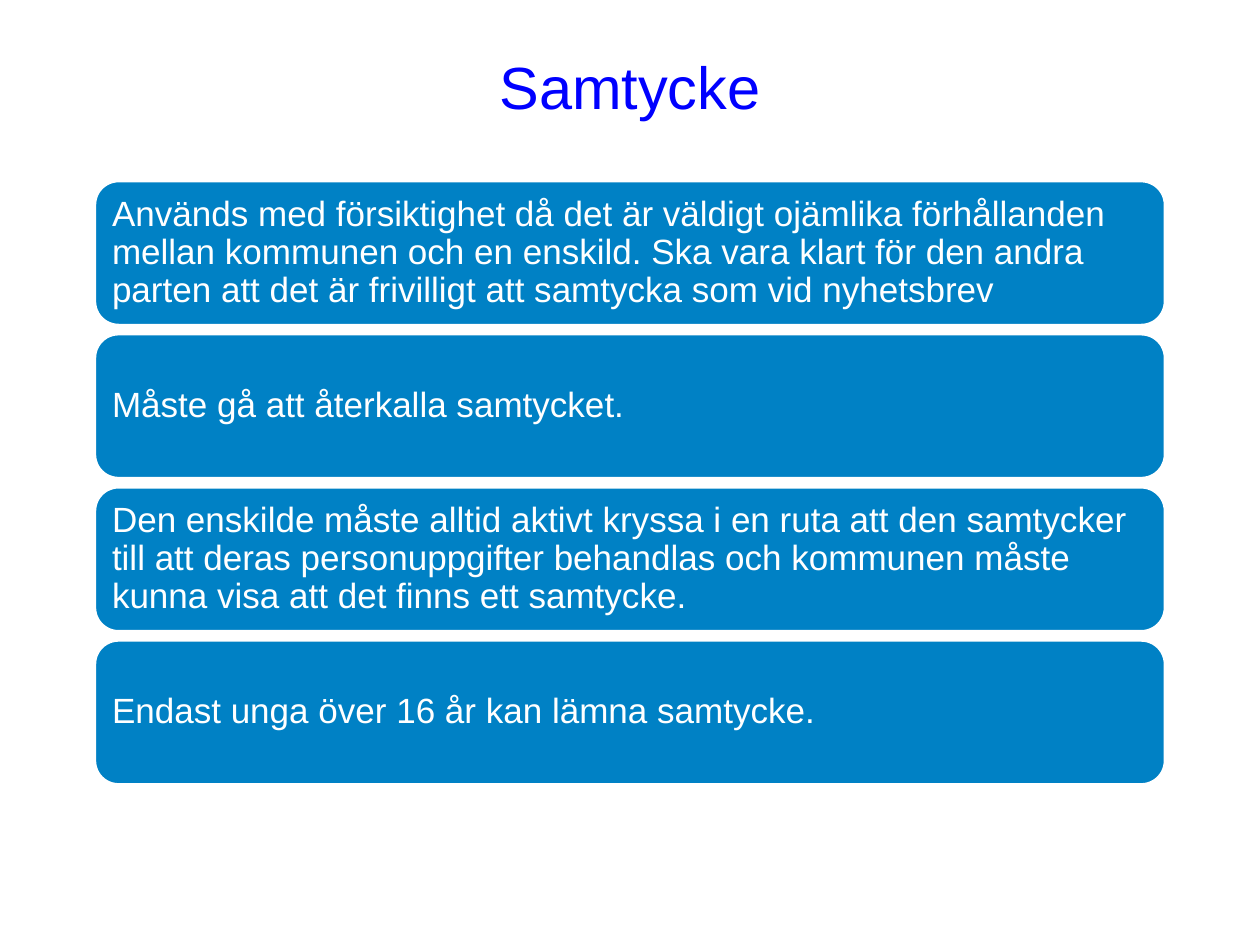
import pptx
import pptx.dml.color
import pptx.enum.shapes
import pptx.enum.text
import pptx.util

Pt = pptx.util.Pt
PP_ALIGN = pptx.enum.text.PP_ALIGN


def rgb(hex_colour):
    return pptx.dml.color.RGBColor.from_string(hex_colour)


def write(frame, text, size, colour, align, inset, line_spacing=1.0):
    """Fill a text frame with one formatted, vertically centred paragraph."""
    frame.word_wrap = True
    frame.auto_size = pptx.enum.text.MSO_AUTO_SIZE.NONE
    frame.vertical_anchor = pptx.enum.text.MSO_ANCHOR.MIDDLE
    frame.margin_left = frame.margin_right = Pt(inset)
    frame.margin_top = frame.margin_bottom = Pt(inset)
    paragraph = frame.paragraphs[0]
    paragraph.alignment = align
    paragraph.line_spacing = line_spacing
    paragraph.space_before = Pt(0)
    run = paragraph.add_run()
    run.text = text
    run.font.name = "Arial"
    run.font.size = Pt(size)
    run.font.color.rgb = rgb(colour)


presentation = pptx.Presentation()
presentation.slide_width = Pt(720)
presentation.slide_height = Pt(540)
slide = presentation.slides.add_slide(presentation.slide_layouts[5])

LEFT, WIDTH = 54, 612
heading = slide.shapes.title
heading.left, heading.top = Pt(LEFT), Pt(15)
heading.width, heading.height = Pt(WIDTH), Pt(68)
write(heading.text_frame, "Samtycke", size=34, colour="0000FF",
      align=PP_ALIGN.CENTER, inset=4)

consent_rules = [
    "Används med försiktighet då det är väldigt ojämlika förhållanden mellan "
    "kommunen och en enskild. Ska vara klart för den andra parten att det är "
    "frivilligt att samtycka som vid nyhetsbrev",
    "Måste gå att återkalla samtycket.",
    "Den enskilde måste alltid aktivt kryssa i en ruta att den samtycker till "
    "att deras personuppgifter behandlas och kommunen måste kunna visa att det "
    "finns ett samtycke.",
    "Endast unga över 16 år kan lämna samtycke.",
]
FIRST_TOP, BAR_HEIGHT, GAP = 103.2, 82.8, 4.7

for index, rule in enumerate(consent_rules):
    bar = slide.shapes.add_shape(
        pptx.enum.shapes.MSO_SHAPE.ROUNDED_RECTANGLE,
        Pt(LEFT), Pt(FIRST_TOP + index * (BAR_HEIGHT + GAP)),
        Pt(WIDTH), Pt(BAR_HEIGHT))
    bar.shadow.inherit = False
    bar.fill.solid()
    bar.fill.fore_color.rgb = rgb("0081C5")
    bar.line.color.rgb = rgb("FFFFFF")
    bar.line.width = Pt(2)
    write(bar.text_frame, rule, size=20, colour="FFFFFF",
          align=PP_ALIGN.LEFT, inset=6, line_spacing=0.9)

presentation.save("out.pptx")
